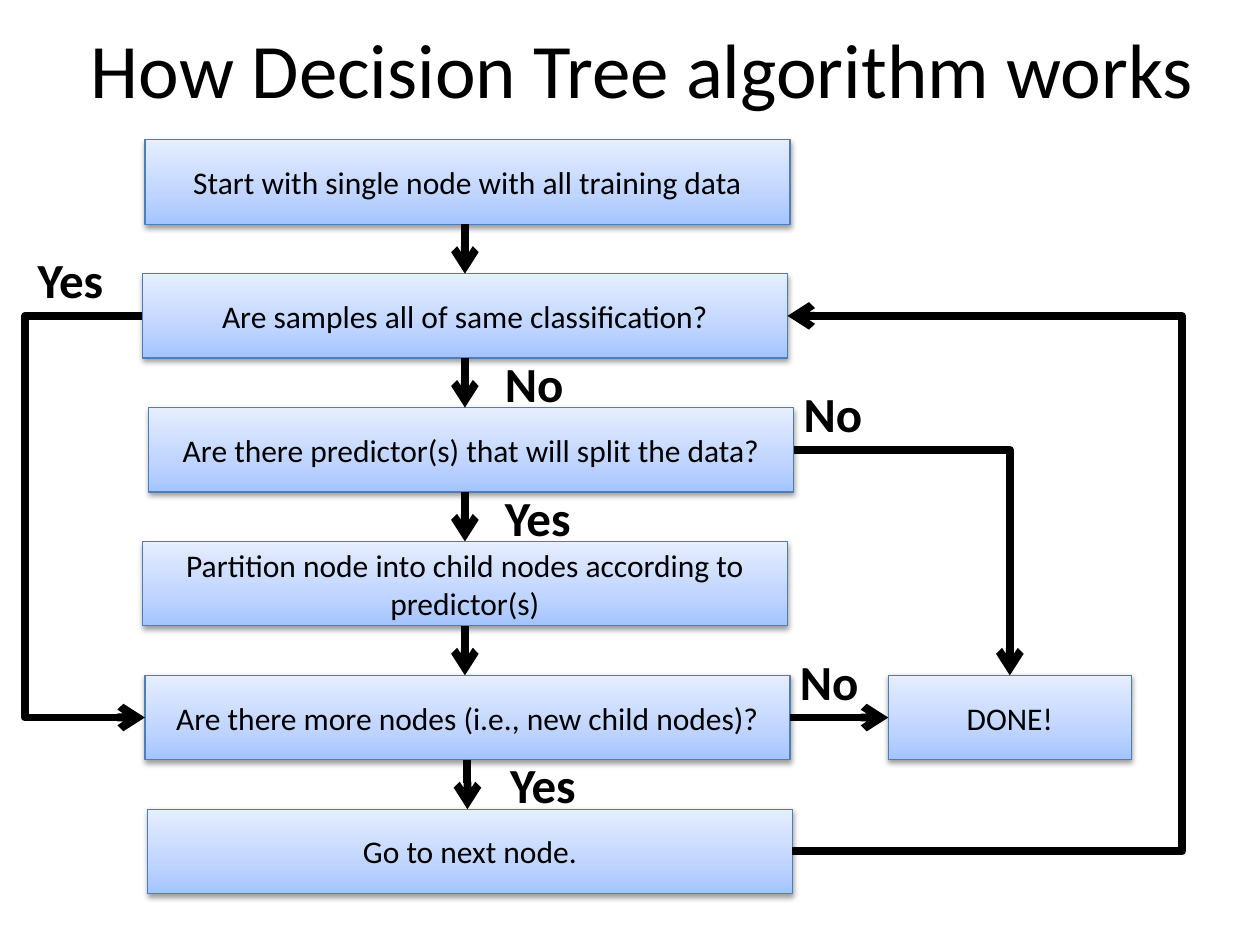
from copy import deepcopy
from dataclasses import dataclass

from lxml import etree
from pptx import Presentation
from pptx.dml.color import RGBColor
from pptx.enum.shapes import MSO_CONNECTOR, MSO_SHAPE
from pptx.enum.text import MSO_ANCHOR, MSO_AUTO_SIZE, PP_ALIGN
from pptx.oxml.ns import qn
from pptx.util import Inches, Pt

STRAIGHT, ELBOW = MSO_CONNECTOR.STRAIGHT, MSO_CONNECTOR.ELBOW
RECTANGLE = MSO_SHAPE.RECTANGLE
MIDDLE, TOP_ANCHOR = MSO_ANCHOR.MIDDLE, MSO_ANCHOR.TOP
LEFT_ALIGN, CENTER = PP_ALIGN.LEFT, PP_ALIGN.CENTER
FIT_TEXT = MSO_AUTO_SIZE.SHAPE_TO_FIT_TEXT
TOP, LEFT, BOTTOM, RIGHT = range(4)  # connection sites of a rectangle


@dataclass(frozen=True)
class Theme:
    font: str = "Calibri"
    ink: str = "000000"
    border: str = "4B7EBC"
    gradient: tuple = ((0, "A4C4FF"), (0.35, "BFD4FF"), (1, "E6EEFF"))
    title_size: int = 44
    step_size: int = 18
    answer_size: int = 28
    border_width: float = 0.75
    arrow_width: float = 4.5


THEME = Theme()

# Grid of the flowchart, in inches
FIRST_ROW, ROW_PITCH = 1.11, 1.0625
STEP_WIDTH, STEP_HEIGHT = 5.12, 0.67
DONE_LEFT, DONE_WIDTH = 7.05, 1.93
ANSWER_WIDTH, ANSWER_HEIGHT = 0.93, 0.57
BESIDE, ABOVE = 0.24, 0.48  # rise of an answer over the top of its row
LEFT_LANE, RIGHT_LANE = 0.2, 9.37

# Left edge and wording of each step, one per row
STEPS = (
    (1.15, "Start with single node with all training data"),
    (1.13, "Are samples all of same classification?"),
    (1.18, "Are there predictor(s) that will split the data?"),
    (1.13, "Partition node into child nodes according to predictor(s)"),
    (1.15, "Are there more nodes (i.e., new child nodes)?"),
    (1.17, "Go to next node."),
)

# Wording, left edge, row and rise of each answer
ANSWERS = (
    ("Yes", 0.2, 1, BESIDE),
    ("No", 3.91, 2, ABOVE),
    ("No", 6.28, 2, BESIDE),
    ("Yes", 3.91, 3, ABOVE),
    ("No", 6.25, 4, BESIDE),
    ("Yes", 3.95, 5, ABOVE),
)


def row_top(row):
    return FIRST_ROW + row * ROW_PITCH


def write_text(shape, text, size, bold=False, align=CENTER, anchor=MIDDLE):
    frame = shape.text_frame
    frame.word_wrap = True
    frame.vertical_anchor = anchor
    paragraph = frame.paragraphs[0]
    paragraph.alignment = align
    run = paragraph.add_run()
    run.text = text
    run.font.name = THEME.font
    run.font.size = Pt(size)
    run.font.bold = bold
    run.font.color.rgb = RGBColor.from_string(THEME.ink)


def fill_gradient(shape):
    shape.fill.gradient()
    shape.fill.gradient_angle = 90
    stop_list = shape._element.spPr.find(qn("a:gradFill")).find(qn("a:gsLst"))
    stop_list.append(deepcopy(stop_list[-1]))
    for stop, (position, color) in zip(shape.fill.gradient_stops, THEME.gradient):
        stop.position = position
        stop.color.rgb = RGBColor.from_string(color)


def add_soft_shadow(shape):
    shape.shadow.inherit = False
    effects = shape._element.spPr.find(qn("a:effectLst"))
    shadow = etree.SubElement(effects, qn("a:outerShdw"), blurRad="40000",
                              dist="20000", dir="5400000", rotWithShape="0")
    color = etree.SubElement(shadow, qn("a:srgbClr"), val=THEME.ink)
    etree.SubElement(color, qn("a:alpha"), val="38000")


def add_step(slide, text, left, row, width=STEP_WIDTH):
    shape = slide.shapes.add_shape(RECTANGLE, Inches(left), Inches(row_top(row)),
                                   Inches(width), Inches(STEP_HEIGHT))
    fill_gradient(shape)
    shape.line.color.rgb = RGBColor.from_string(THEME.border)
    shape.line.width = Pt(THEME.border_width)
    add_soft_shadow(shape)
    write_text(shape, text, THEME.step_size)
    return shape


def add_answer(slide, text, left, row, rise):
    box = slide.shapes.add_textbox(Inches(left), Inches(row_top(row) - rise),
                                   Inches(ANSWER_WIDTH), Inches(ANSWER_HEIGHT))
    write_text(box, text, THEME.answer_size, bold=True, align=LEFT_ALIGN,
               anchor=TOP_ANCHOR)
    box.text_frame.auto_size = FIT_TEXT


def add_arrow(slide, kind, start=(0, 0), end=(0, 0)):
    arrow = slide.shapes.add_connector(kind, *start, *end)
    arrow.line.color.rgb = RGBColor.from_string(THEME.ink)
    arrow.line.width = Pt(THEME.arrow_width)
    properties = arrow._element.spPr
    etree.SubElement(properties.find(qn("a:ln")), qn("a:tailEnd"), type="arrow")
    etree.SubElement(properties, qn("a:effectLst"))
    return arrow


def join(slide, kind, source, source_site, target, target_site):
    arrow = add_arrow(slide, kind)
    arrow.begin_connect(source, source_site)
    arrow.end_connect(target, target_site)
    return arrow


def add_down_arrow(slide, upper, lower, anchor_step):
    """Vertical arrow through the centre of anchor_step, joined to it."""
    center = anchor_step.left + anchor_step.width // 2
    arrow = add_arrow(slide, STRAIGHT, (center, upper.top + upper.height),
                      (center, lower.top))
    if anchor_step is upper:
        arrow.begin_connect(upper, BOTTOM)
    else:
        arrow.end_connect(lower, TOP)


def bend_at(arrow, lane):
    """Put the upright part of an elbow arrow on the given lane."""
    share = (Inches(lane) - arrow.begin_x) / (arrow.end_x - arrow.begin_x)
    geometry = arrow._element.spPr.find(qn("a:prstGeom"))
    guides = geometry.find(qn("a:avLst"))
    etree.SubElement(guides, qn("a:gd"), name="adj1",
                     fmla=f"val {round(share * 100000)}")


def add_single_bend(slide, source, target):
    arrow = join(slide, ELBOW, source, RIGHT, target, TOP)
    arrow._element.spPr.find(qn("a:prstGeom")).set("prst", "bentConnector2")


def main():
    presentation = Presentation()
    presentation.slide_width, presentation.slide_height = Inches(10), Inches(7.5)
    slide = presentation.slides.add_slide(presentation.slide_layouts[5])

    # Title
    title = slide.shapes.title
    title.left, title.top = Inches(0.6), Inches(0)
    title.width, title.height = Inches(9), Inches(1.08)
    write_text(title, "How Decision Tree algorithm works", THEME.title_size)

    # Steps
    steps = [add_step(slide, text, left, row)
             for row, (left, text) in enumerate(STEPS)]
    start, same_class, can_split, partition, more_nodes, next_node = steps
    done = add_step(slide, "DONE!", DONE_LEFT, 4, DONE_WIDTH)

    # Arrows down the column
    anchors = (same_class, same_class, partition, partition, more_nodes)
    for upper, lower, anchor_step in zip(steps, steps[1:], anchors):
        add_down_arrow(slide, upper, lower, anchor_step)

    # Arrows to the end and around the sides
    join(slide, STRAIGHT, more_nodes, RIGHT, done, LEFT)
    add_single_bend(slide, can_split, done)
    bend_at(join(slide, ELBOW, same_class, LEFT, more_nodes, LEFT), LEFT_LANE)
    bend_at(join(slide, ELBOW, next_node, RIGHT, same_class, RIGHT), RIGHT_LANE)

    # Answers
    for answer in ANSWERS:
        add_answer(slide, *answer)

    presentation.save("out.pptx")


if __name__ == "__main__":
    main()
